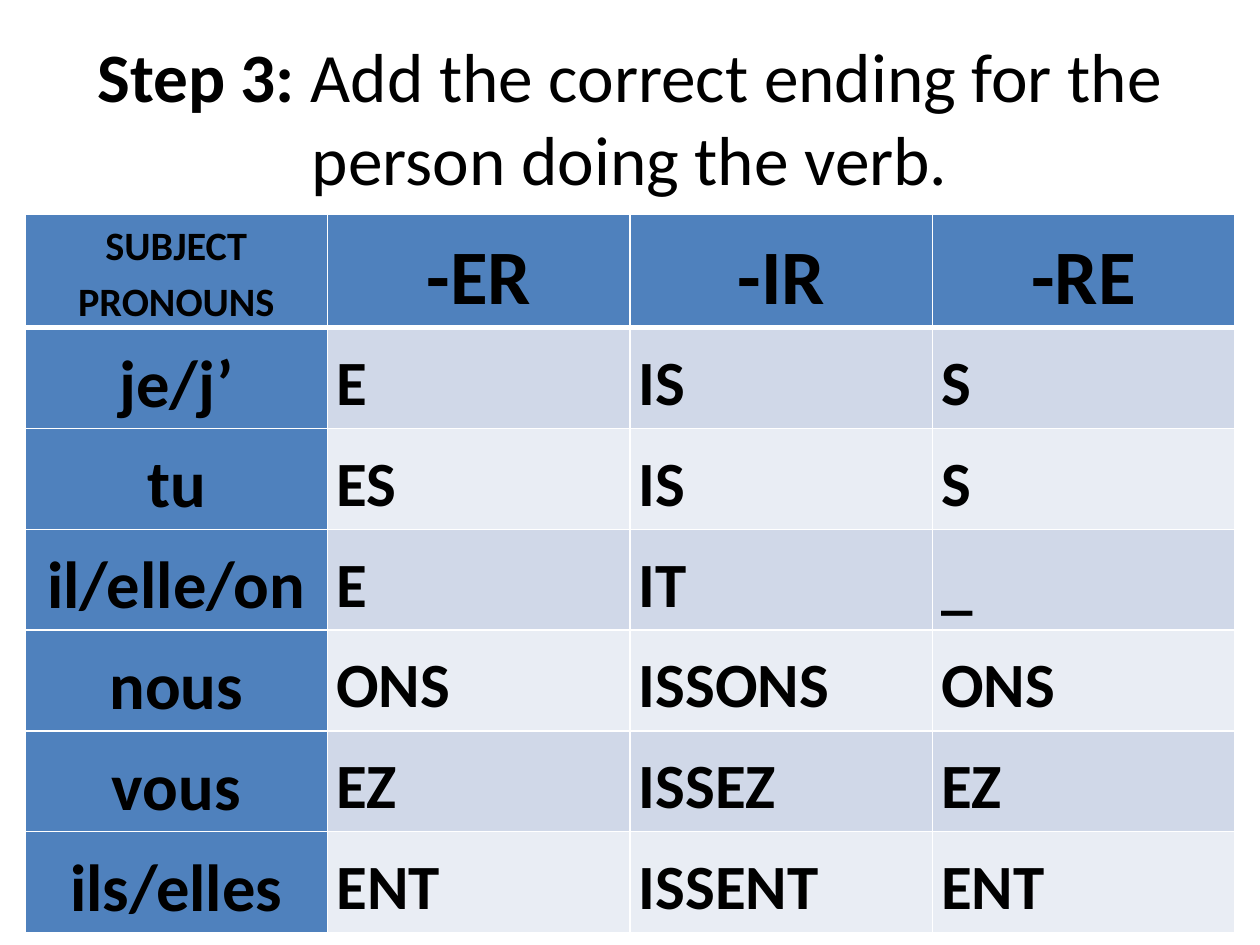
from lxml.etree import SubElement
from pptx import Presentation
from pptx.dml.color import RGBColor
from pptx.enum.text import MSO_ANCHOR as Anchor, PP_ALIGN as Align
from pptx.oxml.ns import qn
from pptx.util import Inches, Pt

HEADINGS = ["SUBJECT PRONOUNS", "-ER", "-IR", "-RE"]
ENDINGS = [
    ["je/j’", "E", "IS", "S"],
    ["tu", "ES", "IS", "S"],
    ["il/elle/on", "E", "IT", "_"],
    ["nous", "ONS", "ISSONS", "ONS"],
    ["vous", "EZ", "ISSEZ", "EZ"],
    ["ils/elles", "ENT", "ISSENT", "ENT"],
]


def color(hex_code):
    return RGBColor.from_string(hex_code)


class SlideBuilder:
    font = "Calibri"
    ink = "000000"
    accent = "4F81BD"
    bands = ["D0D8E8", "E9EDF4"]
    rule = "FFFFFF"

    def __init__(self, page):
        self.page = page

    def add_span(self, para, text, size, bold=True):
        span = para.add_run()
        span.text = text
        span.font.name = self.font
        span.font.size = Pt(size)
        span.font.bold = bold
        span.font.color.rgb = color(self.ink)

    def add_title(self, spans, left, top, width, height, size):
        box = self.page.shapes.title
        box.left, box.top = Inches(left), Inches(top)
        box.width, box.height = Inches(width), Inches(height)
        frame = box.text_frame
        frame.word_wrap = True
        frame.vertical_anchor = Anchor.MIDDLE
        para = frame.paragraphs[0]
        para.alignment = Align.CENTER
        for text, bold in spans:
            self.add_span(para, text, size, bold)

    def set_borders(self, cell, bottom):
        properties = cell._tc.get_or_add_tcPr()
        widths = {"a:lnL": 1, "a:lnR": 1, "a:lnT": 1, "a:lnB": bottom}
        # Borders come before the fill in the cell properties
        for place, (tag, width) in enumerate(widths.items()):
            line = SubElement(properties, qn(tag), w=str(Pt(width)))
            fill = SubElement(line, qn("a:solidFill"))
            SubElement(fill, qn("a:srgbClr"), val=self.rule)
            properties.insert(place, line)

    def fill_cell(self, cell, text, size, fill, align, bottom=1):
        cell.fill.solid()
        cell.fill.fore_color.rgb = color(fill)
        cell.margin_left = cell.margin_right = Inches(0.07)
        cell.margin_top = cell.margin_bottom = 0
        cell.vertical_anchor = Anchor.MIDDLE
        para = cell.text_frame.paragraphs[0]
        para.alignment = align
        para.line_spacing = 1.15
        self.add_span(para, text, size)
        self.set_borders(cell, bottom)

    def add_endings_table(self, headings, rows, left, top, width,
                          head_height, row_height):
        height = head_height + row_height * len(rows)
        table = self.page.shapes.add_table(
            len(rows) + 1, len(headings), Inches(left), Inches(top),
            Inches(width), Inches(height)).table
        table.rows[0].height = Inches(head_height)

        # Header row
        for column, text in enumerate(headings):
            self.fill_cell(table.cell(0, column), text, 44 if column else 23,
                           self.accent, Align.CENTER, bottom=3)

        # Pronoun column and banded endings
        for number, row in enumerate(rows, start=1):
            table.rows[number].height = Inches(row_height)
            band = self.bands[(number - 1) % 2]
            for column, text in enumerate(row):
                cell = table.cell(number, column)
                if column == 0:
                    self.fill_cell(cell, text, 38, self.accent, Align.CENTER)
                else:
                    self.fill_cell(cell, text, 36, band, Align.LEFT)


def main():
    deck = Presentation()
    deck.slide_width, deck.slide_height = Inches(10), Inches(7.5)
    builder = SlideBuilder(deck.slides.add_slide(deck.slide_layouts[5]))

    # Title
    builder.add_title(
        [("Step 3:", True),
         (" Add the correct ending for the person doing the verb.", False)],
        0.5, 0.3, 9, 1.25, size=39.6)

    # Verb endings
    builder.add_endings_table(HEADINGS, ENDINGS, 0.2, 1.7, 9.6,
                              head_height=0.49, row_height=0.8)

    deck.save("out.pptx")


if __name__ == "__main__":
    main()
